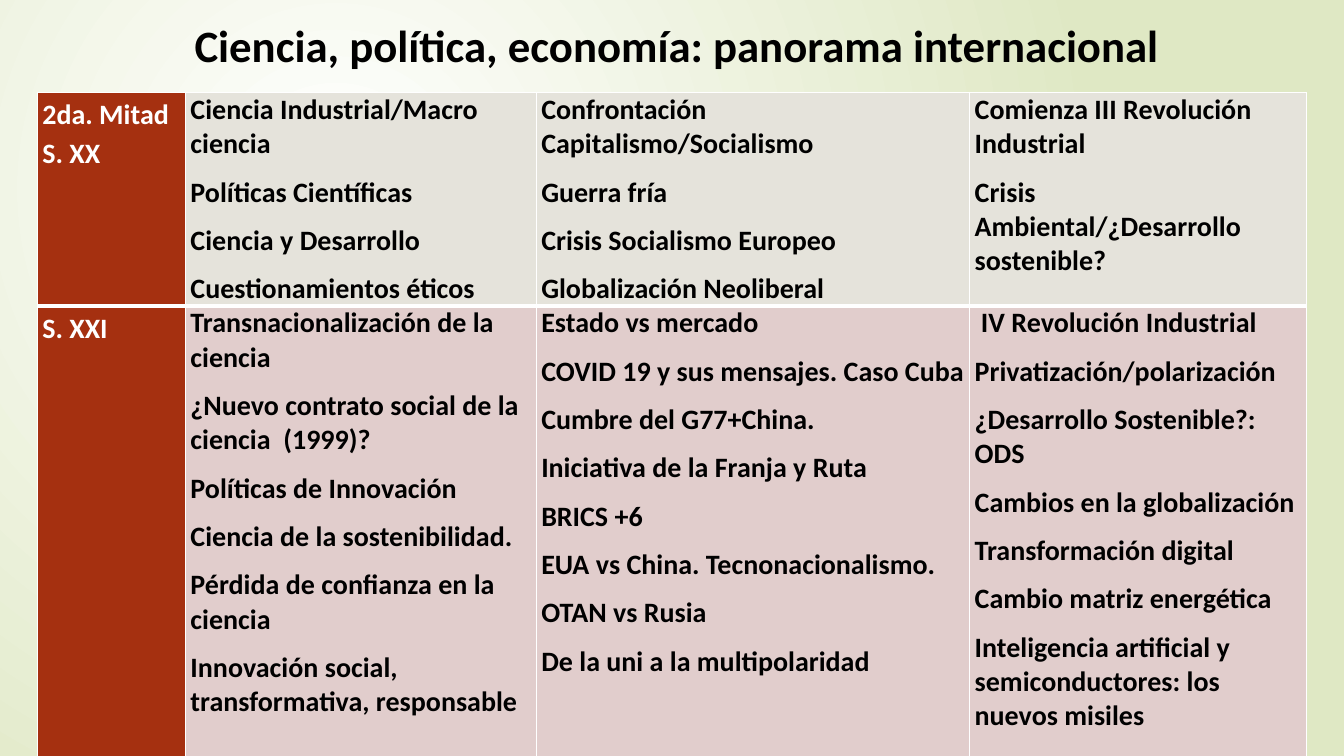
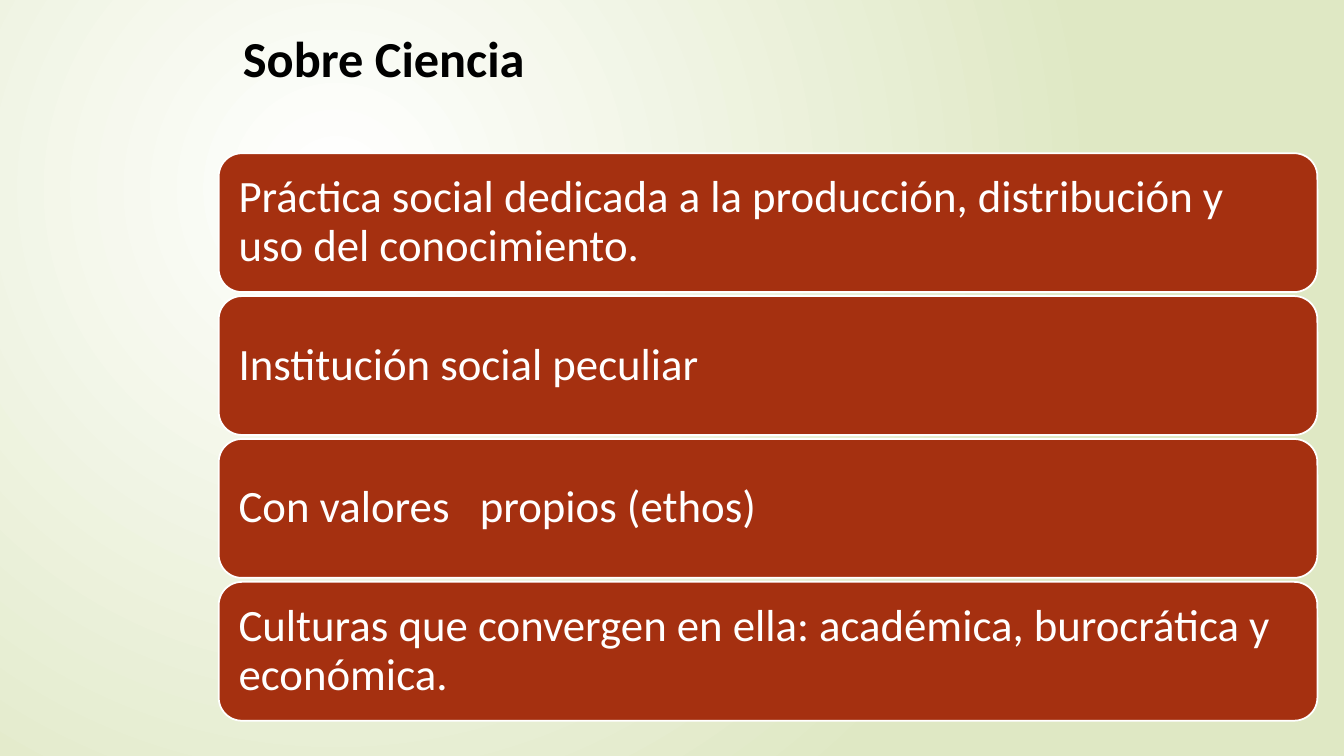
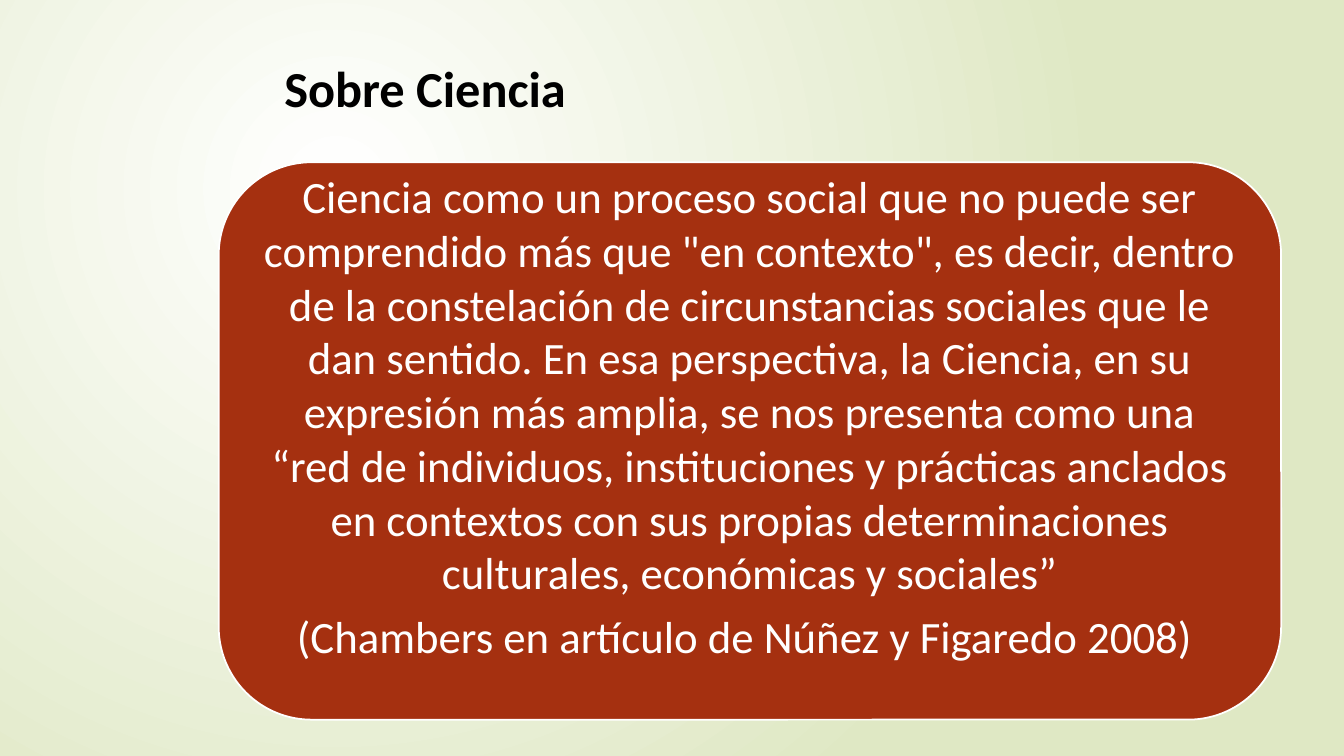
from lxml.etree import SubElement
from pptx import Presentation
from pptx.dml.color import RGBColor
from pptx.enum.shapes import MSO_SHAPE
from pptx.enum.text import MSO_ANCHOR, MSO_AUTO_SIZE, PP_ALIGN
from pptx.oxml import parse_xml
from pptx.oxml.ns import nsdecls, qn
from pptx.util import Inches, Pt

COLORS = {
    "text": "000000", "light": "FFFFFF", "rust": "A53010",
    "sand": "E5E3DB", "rose": "E1CDCC", "green": "DFE8C4",
}
FONT = "Calibri"
TITLE_ONLY = 5

COLUMN_WIDTHS = [1.47, 3.48, 4.3, 3.34]
ROW_HEIGHTS = [2.02, 4.5]
PERIODS = [
    [
        ["2da. Mitad S. XX"],
        ["Ciencia Industrial/Macro ciencia", "Políticas Científicas",
         "Ciencia y Desarrollo", "Cuestionamientos éticos"],
        ["Confrontación Capitalismo/Socialismo", "Guerra fría",
         "Crisis Socialismo Europeo", "Globalización Neoliberal"],
        ["Comienza III Revolución Industrial",
         "Crisis Ambiental/¿Desarrollo sostenible?"],
    ],
    [
        ["S. XXI"],
        ["Transnacionalización de la ciencia",
         "¿Nuevo contrato social de la ciencia  (1999)?",
         "Políticas de Innovación", "Ciencia de la sostenibilidad.",
         "Pérdida de confianza en la ciencia",
         "Innovación social, transformativa, responsable"],
        ["Estado vs mercado", "COVID 19 y sus mensajes. Caso Cuba",
         "Cumbre del G77+China.", "Iniciativa de la Franja y Ruta",
         "BRICS +6", "EUA vs China. Tecnonacionalismo.",
         "OTAN vs Rusia", "De la uni a la multipolaridad"],
        [" IV Revolución Industrial", "Privatización/polarización",
         "¿Desarrollo Sostenible?: ODS", "Cambios en la globalización",
         "Transformación digital", "Cambio matriz energética",
         "Inteligencia artificial y semiconductores: los nuevos misiles"],
    ],
]
TRAITS = [
    "Práctica social dedicada a la producción, distribución y uso del conocimiento.",
    "Institución social peculiar",
    "Con valores   propios (ethos)",
    "Culturas que convergen en ella: académica, burocrática y económica.",
]
QUOTE = (
    "Ciencia como un proceso social que no puede ser comprendido más que "
    "\"en contexto\", es decir, dentro de la constelación de circunstancias "
    "sociales que le dan sentido. En esa perspectiva, la Ciencia, en su "
    "expresión más amplia, se nos presenta como una “red de individuos, "
    "instituciones y prácticas anclados en contextos con sus propias "
    "determinaciones culturales, económicas y sociales”"
)
CITATION = "(Chambers en artículo de Núñez y Figaredo 2008) "


def rgb(name):
    return RGBColor.from_string(COLORS[name])


def write(frame, texts, size, color, bold=False, align=PP_ALIGN.LEFT,
          spacings=(1.0,), after=0):
    """One paragraph per text; the last line spacing serves the remaining ones."""
    for index, text in enumerate(texts):
        para = frame.add_paragraph() if index else frame.paragraphs[0]
        para.alignment = align
        para.line_spacing = spacings[min(index, len(spacings) - 1)]
        para.space_after = Pt(after)
        span = para.add_run()
        span.text = text
        span.font.name = FONT
        span.font.size = Pt(size)
        span.font.bold = bold
        span.font.color.rgb = rgb(color)


def set_background(master):
    """Radial glow shared by every slide."""
    common = master.element.find(qn("p:cSld"))
    common.remove(common.find(qn("p:bg")))
    common.insert(0, parse_xml(
        f'<p:bg {nsdecls("p", "a")}><p:bgPr><a:gradFill rotWithShape="1"><a:gsLst>'
        f'<a:gs pos="0"><a:srgbClr val="{COLORS["light"]}"/></a:gs>'
        f'<a:gs pos="100000"><a:srgbClr val="{COLORS["green"]}"/></a:gs></a:gsLst>'
        '<a:path path="circle"><a:fillToRect l="50000" t="50000" r="100000" b="100000"/>'
        '</a:path></a:gradFill><a:effectLst/></p:bgPr></p:bg>'))


def add_page(deck, title, box, size):
    page = deck.slides.add_slide(deck.slide_layouts[TITLE_ONLY])
    heading = page.shapes.title
    heading.left, heading.top, heading.width, heading.height = map(Inches, box)
    frame = heading.text_frame
    frame.auto_size = MSO_AUTO_SIZE.NONE
    frame.vertical_anchor = MSO_ANCHOR.TOP
    write(frame, [title], size, "text", bold=True)
    return page


def set_borders(cell, **widths):
    properties = cell._tc.get_or_add_tcPr()
    for side in "LRTB":
        line = SubElement(properties, qn(f"a:ln{side}"),
                          w=str(Pt(widths.get(side, 1))))
        fill = SubElement(line, qn("a:solidFill"))
        SubElement(fill, qn("a:srgbClr"), val=COLORS["light"])


def add_periods(page, left, top):
    """Table with one row per period; its first column names the period."""
    table = page.shapes.add_table(
        len(PERIODS), len(COLUMN_WIDTHS), Inches(left), Inches(top),
        Inches(sum(COLUMN_WIDTHS)), Inches(sum(ROW_HEIGHTS))).table
    for column, width in zip(table.columns, COLUMN_WIDTHS):
        column.width = Inches(width)
    for row, height in zip(table.rows, ROW_HEIGHTS):
        row.height = Inches(height)
    row_styles = [("sand", {"B": 3}), ("rose", {"T": 3})]
    for r, (row_fill, borders) in enumerate(row_styles):
        for c, texts in enumerate(PERIODS[r]):
            cell = table.cell(r, c)
            is_label = c == 0
            cell.margin_left = cell.margin_right = Inches(0.05)
            cell.margin_top = cell.margin_bottom = 0
            set_borders(cell, **borders)
            cell.fill.solid()
            cell.fill.fore_color.rgb = rgb("rust" if is_label else row_fill)
            write(cell.text_frame, texts, 20, "light" if is_label else "text",
                  bold=True, spacings=(1.15 if is_label else 1.0,), after=10)


def add_card(page, box, texts, **style):
    card = page.shapes.add_shape(MSO_SHAPE.ROUNDED_RECTANGLE, *map(Inches, box))
    card.shadow.inherit = False
    card.fill.solid()
    card.fill.fore_color.rgb = rgb("rust")
    card.line.color.rgb = rgb("light")
    card.line.width = Pt(1.25)
    frame = card.text_frame
    frame.word_wrap = True
    frame.vertical_anchor = MSO_ANCHOR.MIDDLE
    frame.margin_left = frame.margin_right = Inches(0.13)
    frame.margin_top = frame.margin_bottom = Inches(0.13)
    write(frame, texts, 32, "light", after=11, **style)
    return card


def add_card_stack(page, box, texts, gap=0.04):
    """Equal cards that fill the box from top to bottom."""
    left, top, width, height = box
    card_height = (height - gap * (len(texts) - 1)) / len(texts)
    for index, text in enumerate(texts):
        card_top = top + index * (card_height + gap)
        add_card(page, (left, card_top, width, card_height), [text], spacings=(0.9,))


def add_quote(page, box):
    card = add_card(page, box, [QUOTE, CITATION], align=PP_ALIGN.CENTER,
                    spacings=(1.0, 0.9))
    # Narrow the lines and lift the text a little above the middle
    frame = card.text_frame
    frame.margin_left = frame.margin_right = Inches(0.15)
    frame.margin_top = 0
    frame.margin_bottom = Inches(0.5)


def main():
    deck = Presentation()
    deck.slide_width, deck.slide_height = Inches(40 / 3), Inches(7.5)
    set_background(deck.slide_master)

    # International overview
    page = add_page(deck, "Ciencia, política, economía: panorama internacional",
                    (1.83, 0.13, 10.59, 0.97), 32)
    add_periods(page, 0.37, 0.92)

    # Traits of science
    page = add_page(deck, "Sobre Ciencia", (2.31, 0.22, 9.75, 1.4), 36)
    add_card_stack(page, (2.17, 1.52, 10.9, 5.63), TRAITS)

    # Science in context
    page = add_page(deck, "Sobre Ciencia", (2.72, 0.52, 9.75, 1.4), 36)
    add_quote(page, (2.17, 1.61, 10.54, 5.53))

    deck.save("out.pptx")


if __name__ == "__main__":
    main()
